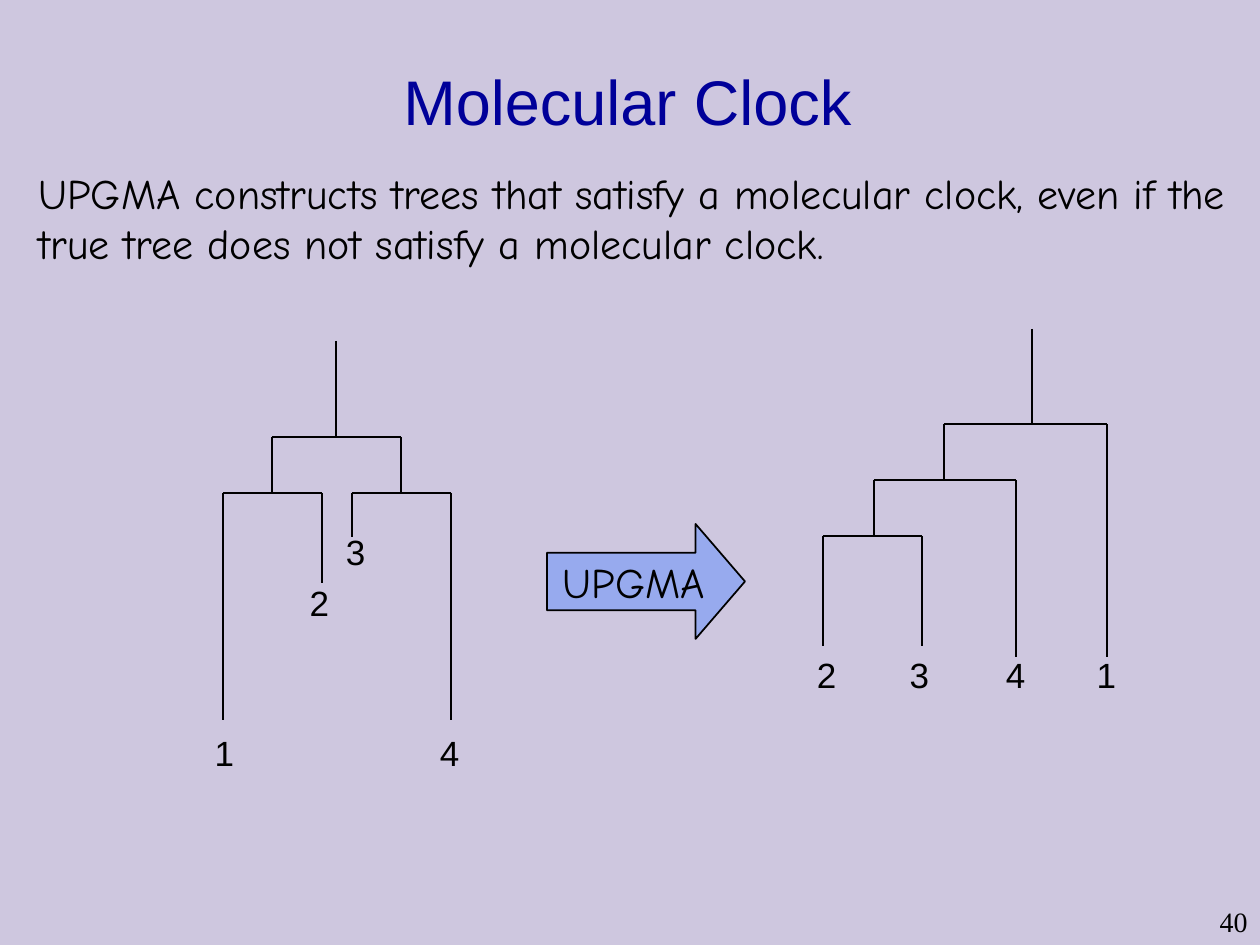
from lxml import etree
from pptx import Presentation
from pptx import util as u
from pptx.dml.color import RGBColor
from pptx.enum import shapes, text
from pptx.oxml.ns import qn

SCALE = 914400 / 126  # EMU per px

BACKGROUND = RGBColor(0xCE, 0xC7, 0xDF)
BLACK = RGBColor(0x00, 0x00, 0x00)
NAVY = RGBColor(0x00, 0x00, 0x99)
BLUE = RGBColor(0x61, 0x8F, 0xFD)

LEFT, CENTER, RIGHT = text.PP_ALIGN.LEFT, text.PP_ALIGN.CENTER, text.PP_ALIGN.RIGHT
TOP, MIDDLE = text.MSO_ANCHOR.TOP, text.MSO_ANCHOR.MIDDLE

# Forks of each tree: y, left x, right x, left end y, right end y
TRUE_FORKS = [(437, 272, 401, 493, 493),
              (493, 223, 322, 720, 583),
              (493, 352, 451, 537, 720)]
CLOCK_FORKS = [(424, 944, 1107, 480, 657),
               (480, 874, 1016, 536, 657),
               (536, 823, 922, 646, 646)]

# Leaf labels: text, left, top
TRUE_LEAVES = [("1", 202, 725), ("2", 297, 575), ("3", 333, 524), ("4", 427, 725)]
CLOCK_LEAVES = [("2", 804, 647), ("3", 897, 647), ("4", 993, 647), ("1", 1084, 647)]


def px(*values):
    return [u.Emu(round(v * SCALE)) for v in values]


def set_text(sp, content, size, font, color=BLACK, align=CENTER, anchor=MIDDLE, wrap=False):
    tf = sp.text_frame
    tf.word_wrap = wrap
    tf.vertical_anchor = anchor
    p = tf.paragraphs[0]
    p.text = content
    p.alignment = align
    p.font.size = u.Pt(size)
    p.font.name = font
    p.font.color.rgb = color


def add_text(parent, box, *args, **kwargs):
    set_text(parent.add_textbox(*px(*box)), *args, **kwargs)


def add_line(parent, x1, y1, x2, y2):
    line = parent.add_connector(shapes.MSO_CONNECTOR.STRAIGHT, *px(x1, y1, x2, y2))
    line.line.color.rgb = BLACK
    line.line.width = u.Pt(1)
    etree.SubElement(line._element.spPr, qn("a:effectLst"))


def add_fork(parent, y, left, right, left_end, right_end):
    add_line(parent, left, y, right, y)
    add_line(parent, left, y, left, left_end)
    add_line(parent, right, y, right, right_end)


def add_tree(slide, root, forks, leaves):
    group = slide.shapes.add_group_shape().shapes
    add_line(group, *root)
    for fork in forks:
        add_fork(group, *fork)
    for name, x, y in leaves:
        add_text(group, (x, y, 45, 54), name, 20, "Arial")


def add_arrow(slide, box, label):
    sp = slide.shapes.add_shape(shapes.MSO_SHAPE.RIGHT_ARROW, *px(*box))
    sp.adjustments[0] = 0.5
    sp.adjustments[1] = 0.43
    sp.shadow.inherit = False
    sp.fill.solid()
    sp.fill.fore_color.rgb = BLUE
    color = sp._element.spPr.find(f"{qn('a:solidFill')}/{qn('a:srgbClr')}")
    etree.SubElement(color, qn("a:alpha"), val="50000")
    sp.line.color.rgb = BLACK
    sp.line.width = u.Pt(1)
    set_text(sp, label, 24, "Comic Neue")


def main():
    prs = Presentation()
    prs.slide_width, prs.slide_height = px(1260, 945)
    s = prs.slides.add_slide(prs.slide_layouts[6])
    s.background.fill.solid()
    s.background.fill.fore_color.rgb = BACKGROUND

    # Slide number, title and statement
    add_text(s.shapes, (1202, 898, 58, 47), "40", 16, "Times New Roman", align=RIGHT)
    add_text(s.shapes, (48, 21, 1159, 158), "Molecular Clock", 36, "Arial",
             color=NAVY, wrap=True)
    add_text(s.shapes, (26, 161, 1213, 113),
             "UPGMA constructs trees that satisfy a molecular clock, even if the "
             "true tree does not satisfy a molecular clock.",
             24, "Comic Neue", align=LEFT, anchor=TOP, wrap=True)

    # True tree, method arrow and resulting clock tree
    add_tree(s, (336, 341, 336, 437), TRUE_FORKS, TRUE_LEAVES)
    add_arrow(s, (547, 524, 198, 115), "UPGMA")
    add_tree(s, (1032, 329, 1032, 424), CLOCK_FORKS, CLOCK_LEAVES)

    prs.save("out.pptx")


if __name__ == "__main__":
    main()
